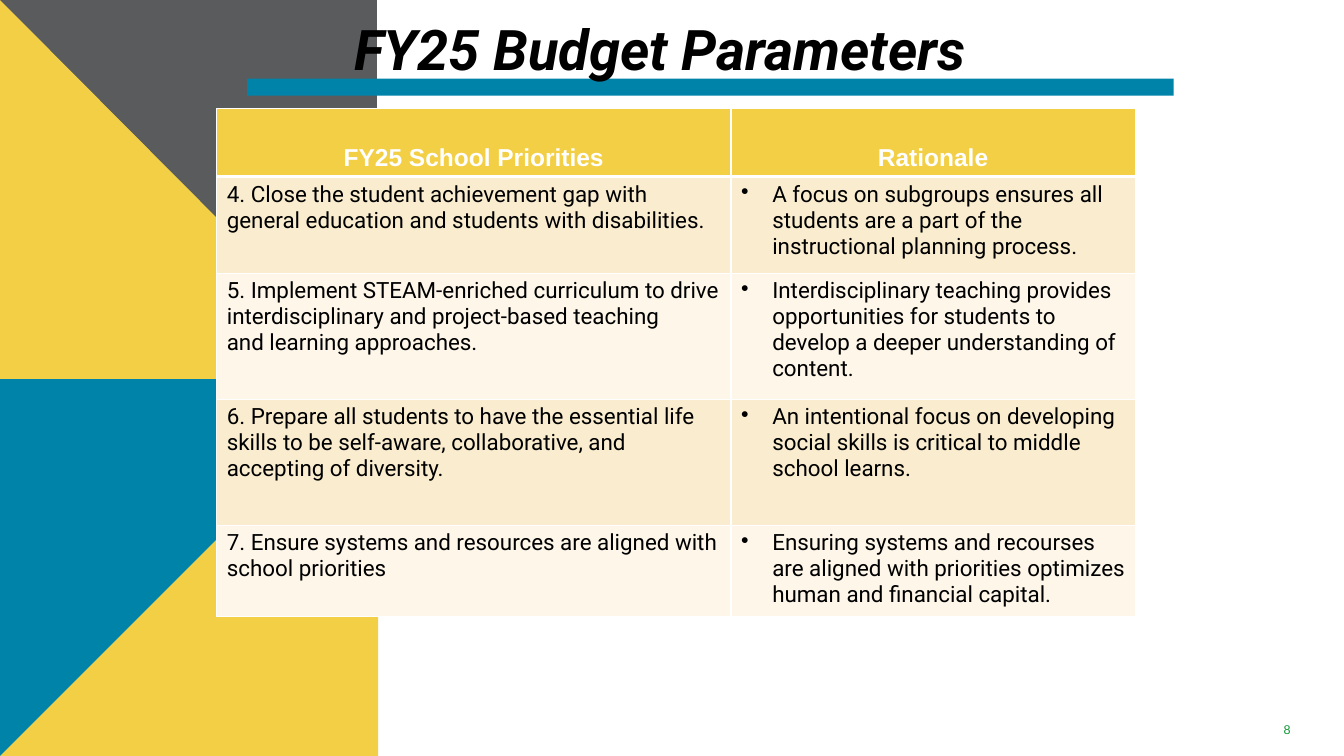
from pptx import Presentation
from pptx.dml.color import RGBColor
from pptx.enum.shapes import MSO_SHAPE as Shape
from pptx.enum.text import MSO_ANCHOR as Anchor, MSO_AUTO_SIZE as AutoSize, PP_ALIGN as Align
from pptx.oxml import parse_xml
from pptx.oxml.ns import nsdecls
from pptx.util import Inches, Pt

BLUE = RGBColor(0x00, 0x83, 0xA9)
YELLOW = RGBColor(0xF3, 0xCF, 0x45)
GRAY = RGBColor(0x59, 0x5B, 0x5D)
GREEN = RGBColor(0x15, 0x98, 0x39)
SAND = RGBColor(0xFA, 0xED, 0xCF)
CREAM = RGBColor(0xFD, 0xF6, 0xE9)
BLACK = RGBColor(0, 0, 0)
WHITE = RGBColor(0xFF, 0xFF, 0xFF)

HEADINGS = ("FY25 School Priorities", "Rationale")
PRIORITIES = [
    ("4. Close the student achievement gap with general education and students with disabilities.",
     "A focus on subgroups ensures all students are a part of the instructional planning process."),
    ("5. Implement STEAM-enriched curriculum to drive interdisciplinary and project-based teaching\n"
     "and learning approaches.",
     "Interdisciplinary teaching provides opportunities for students to develop a deeper "
     "understanding of content."),
    ("6. Prepare all students to have the essential life skills to be self-aware, collaborative, and\n"
     "accepting of diversity.",
     "An intentional focus on developing social skills is critical to middle school learns."),
    ("7. Ensure systems and resources are aligned with school priorities",
     "Ensuring systems and recourses are aligned with priorities optimizes human and financial capital."),
]
COLUMN_WIDTHS = (5.1, 4.01)
ROW_HEIGHTS = (0.67, 0.96, 1.25, 1.25, 0.91)


class PriorityPage:
    """Draws the elements of a budget page in one shared style."""

    def __init__(self, deck):
        self.page = deck.slides.add_slide(deck.slide_layouts[5])

    def paint(self, shape, color):
        shape.shadow.inherit = False
        shape.fill.solid()
        shape.fill.fore_color.rgb = color
        shape.line.fill.background()

    def polygon(self, points, color):
        corners = [(Inches(x), Inches(y)) for x, y in points]
        builder = self.page.shapes.build_freeform(*corners[0])
        builder.add_line_segments(corners[1:], close=True)
        self.paint(builder.convert_to_shape(), color)

    def bar(self, left, top, width, height, color):
        area = map(Inches, (left, top, width, height))
        self.paint(self.page.shapes.add_shape(Shape.RECTANGLE, *area), color)

    def style(self, para, font_name, size, color, bold=False, italic=False, align=Align.LEFT):
        para.alignment = align
        font = para.font
        font.name, font.size, font.bold, font.italic = font_name, Pt(size), bold, italic
        font.color.rgb = color

    def title(self, text, left, top, width, height):
        box = self.page.shapes.title
        box.left, box.top, box.width, box.height = map(Inches, (left, top, width, height))
        frame = box.text_frame
        frame.text = text
        frame.auto_size = AutoSize.NONE
        frame.vertical_anchor = Anchor.TOP
        self.style(frame.paragraphs[0], "Roboto", 40, BLACK, True, True, Align.CENTER)
        self.page.shapes._spTree.append(box._element)

    def page_number(self, text, left, top, width, height):
        area = map(Inches, (left, top, width, height))
        frame = self.page.shapes.add_textbox(*area).text_frame
        frame.word_wrap = True
        frame.vertical_anchor = Anchor.MIDDLE
        frame.text = text
        self.style(frame.paragraphs[0], "Arial", 9, GREEN, align=Align.CENTER)

    def borders(self, cell, top, bottom):
        properties = cell._tc.get_or_add_tcPr()
        for side, points in (("L", 1), ("R", 1), ("T", top), ("B", bottom)):
            properties.append(parse_xml(
                f'<a:ln{side} {nsdecls("a")} w="{Pt(points)}"><a:solidFill>'
                f'<a:srgbClr val="{WHITE}"/></a:solidFill></a:ln{side}>'))

    def bullet(self, para):
        properties = para._p.get_or_add_pPr()
        properties.set("marL", str(Inches(0.31)))
        properties.set("indent", str(Inches(-0.31)))
        properties.insert_element_before(
            parse_xml(f'<a:buChar {nsdecls("a")} char="•"/>'), "a:tabLst", "a:defRPr", "a:extLst")

    def table(self, rows, left, top):
        area = map(Inches, (left, top, sum(COLUMN_WIDTHS), sum(ROW_HEIGHTS)))
        table = self.page.shapes.add_table(len(rows), len(COLUMN_WIDTHS), *area).table
        for column, width in zip(table.columns, COLUMN_WIDTHS):
            column.width = Inches(width)
        for row, height in zip(table.rows, ROW_HEIGHTS):
            row.height = Inches(height)
        for row_index, texts in enumerate(rows):
            for column_index, text in enumerate(texts):
                self.cell(table.cell(row_index, column_index), text, row_index, column_index)

    def cell(self, cell, text, row_index, column_index):
        header = row_index == 0
        cell.text = text
        self.borders(cell, 3 if row_index == 1 else 1, 3 if header else 1)
        cell.fill.solid()
        cell.fill.fore_color.rgb = YELLOW if header else SAND if row_index % 2 else CREAM
        cell.vertical_anchor = Anchor.BOTTOM if header else Anchor.TOP
        for para in cell.text_frame.paragraphs:
            if header:
                self.style(para, "Arial", 17.5, WHITE, True, align=Align.CENTER)
            else:
                self.style(para, "Roboto", 16, BLACK)
                if column_index == 1:
                    self.bullet(para)


def main():
    deck = Presentation()
    deck.slide_width, deck.slide_height = Inches(13.33), Inches(7.5)
    page = PriorityPage(deck)
    page.polygon([(0, 3.75), (3.75, 3.75), (3.75, 7.5), (0, 7.5)], BLUE)
    page.polygon([(3.75, 3.75), (3.75, 7.5), (0, 7.5)], YELLOW)
    page.polygon([(0, 0), (3.74, 0), (3.74, 3.76), (0, 3.76)], GRAY)
    page.polygon([(0, 0), (3.74, 3.76), (0, 3.76)], YELLOW)
    page.bar(2.45, 0.78, 9.19, 0.17, BLUE)
    page.title("FY25 Budget Parameters", 3.05, 0.09, 6.99, 0.77)
    page.page_number("8", 12.36, 7.09, 0.81, 0.3)
    page.table([HEADINGS, *PRIORITIES], 2.15, 1.08)
    deck.save("out.pptx")


if __name__ == "__main__":
    main()
